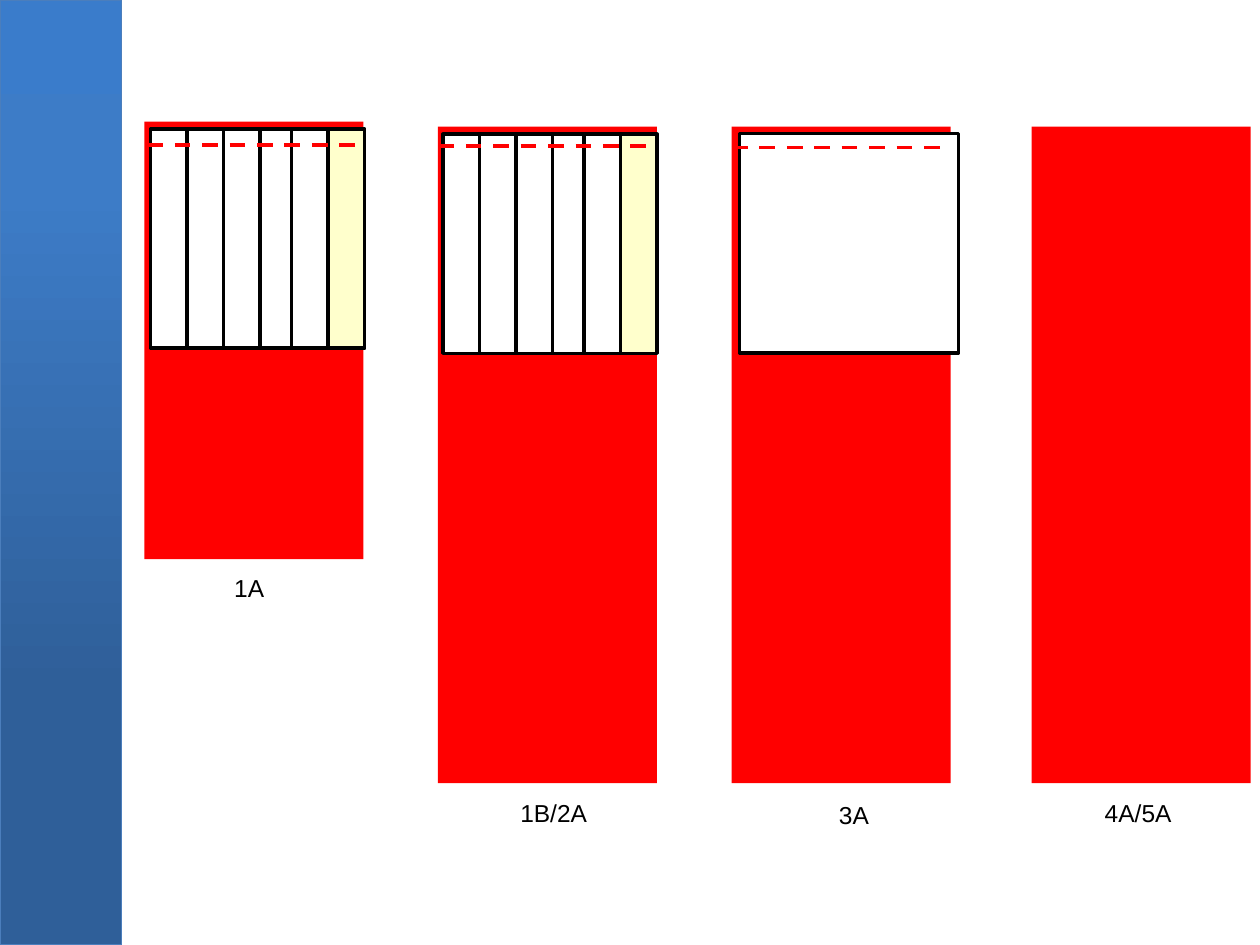
from copy import deepcopy

from pptx import Presentation
from pptx.dml.color import RGBColor
from pptx.enum.dml import MSO_LINE
from pptx.enum.shapes import MSO_CONNECTOR, MSO_SHAPE
from pptx.enum.text import MSO_AUTO_SIZE
from pptx.oxml.ns import qn
from pptx.oxml.xmlchemy import OxmlElement
from pptx.util import Pt

RECT = MSO_SHAPE.RECTANGLE
LINE = MSO_CONNECTOR.STRAIGHT
DASH = MSO_LINE.DASH
GROW = MSO_AUTO_SIZE.SHAPE_TO_FIT_TEXT

RED, BLACK, WHITE, CREAM = "FF0000", "000000", "FFFFFF", "FFFFCC"


def color(code):
    return RGBColor.from_string(code)


class Board:
    font, size = "Arial", 14
    edge, dash = 2, 2.25

    def __init__(self, slide):
        self.slide = slide

    def group(self):
        return self.slide.shapes.add_group_shape().shapes

    def rect(self, shapes, x, y, w, h):
        box = shapes.add_shape(RECT, Pt(x), Pt(y), Pt(w), Pt(h))
        box.shadow.inherit = False
        return box

    def bar(self, shapes, x, y, w, h, fill, edge=None):
        """Fill the upright box x, y, w, h with a rectangle lying on its side."""
        box = self.rect(shapes, x + (w - h) / 2, y + (h - w) / 2, h, w)
        box.rotation = 90
        box.fill.solid()
        box.fill.fore_color.rgb = color(fill)
        if edge:
            box.line.color.rgb = color(edge)
            box.line.width = Pt(self.edge)
        else:
            box.line.fill.background()

    def fade(self, x, y, w, h, stops, edge):
        box = self.rect(self.slide.shapes, x, y, w, h)
        box.fill.gradient()
        box.fill.gradient_angle = 90
        items = box._element.spPr.find(".//" + qn("a:gsLst"))
        while len(items) < len(stops):
            items.append(deepcopy(items[0]))
        for stop, (place, code) in zip(box.fill.gradient_stops, stops):
            stop.position = place
            stop.color.rgb = color(code)
        box.line.color.rgb = color(edge)
        box.line.width = Pt(0.75)

    def dashes(self, shapes, x, y, w):
        rule = shapes.add_connector(LINE, Pt(x), Pt(y), Pt(x + w), Pt(y))
        rule.line.color.rgb = color(RED)
        rule.line.width = Pt(self.dash)
        rule.line.dash_style = DASH
        rule._element.spPr.append(OxmlElement("a:effectLst"))

    def label(self, x, y, w, text):
        box = self.slide.shapes.add_textbox(Pt(x), Pt(y), Pt(w), Pt(24.5))
        frame = box.text_frame
        frame.word_wrap = True
        frame.auto_size = GROW
        run = frame.paragraphs[0].add_run()
        run.text = text
        run.font.name = self.font
        run.font.size = Pt(self.size)
        run.font.color.rgb = color(BLACK)


def main():
    deck = Presentation()
    deck.slide_width, deck.slide_height = Pt(720), Pt(540)
    board = Board(deck.slides.add_slide(deck.slide_layouts[6]))

    # Side band
    stops = [(0, "2F5F99"), (0.27, "2F5F99"), (0.8, "3D7CC7"), (1, "3A7CCB")]
    board.fade(0, 0, 69.4, 540, stops, "4B7EBC")

    wide, tall, thin = 125.2, 375.2, 20.9
    top = 72.4

    def strips(x, y, h, inset, start, rule):
        """Red bar under six strips; the last three sit 3 pt closer."""
        group = board.group()
        board.bar(group, x, y, wide, h, RED)
        for i in reversed(range(6)):
            left = x + inset + i * thin - (3 if i > 2 else 0)
            fill = CREAM if i == 5 else WHITE
            board.bar(group, left, y + 4.3, thin, wide, fill, BLACK)
        board.dashes(group, start, rule, wide)

    # 1B/2A: strips on a long bar
    strips(250.2, top, tall, 2.9, 250.5, 83.5)

    # 3A: one panel on a long bar
    group = board.group()
    board.bar(group, 418, top, wide, tall, RED)
    board.bar(group, 422.6, 76.4, wide, wide, WHITE, BLACK)
    board.dashes(group, 418.3, 84.3, wide)

    # 4A/5A: plain long bar
    board.bar(board.slide.shapes, 589.4, top, wide, tall, RED)

    # 1A: strips on a short bar
    strips(82.5, 69.5, 250, 3.5, 84.2, 82.8)

    # Labels
    for x, y, w, text in [
        (126.7, 324, 35.3, "1A"),
        (624.2, 452.2, 61.2, "4A/5A"),
        (472.3, 453.6, 35.3, "3A"),
        (290.2, 452.2, 59, "1B/2A"),
    ]:
        board.label(x, y, w, text)

    deck.save("out.pptx")


if __name__ == "__main__":
    main()
